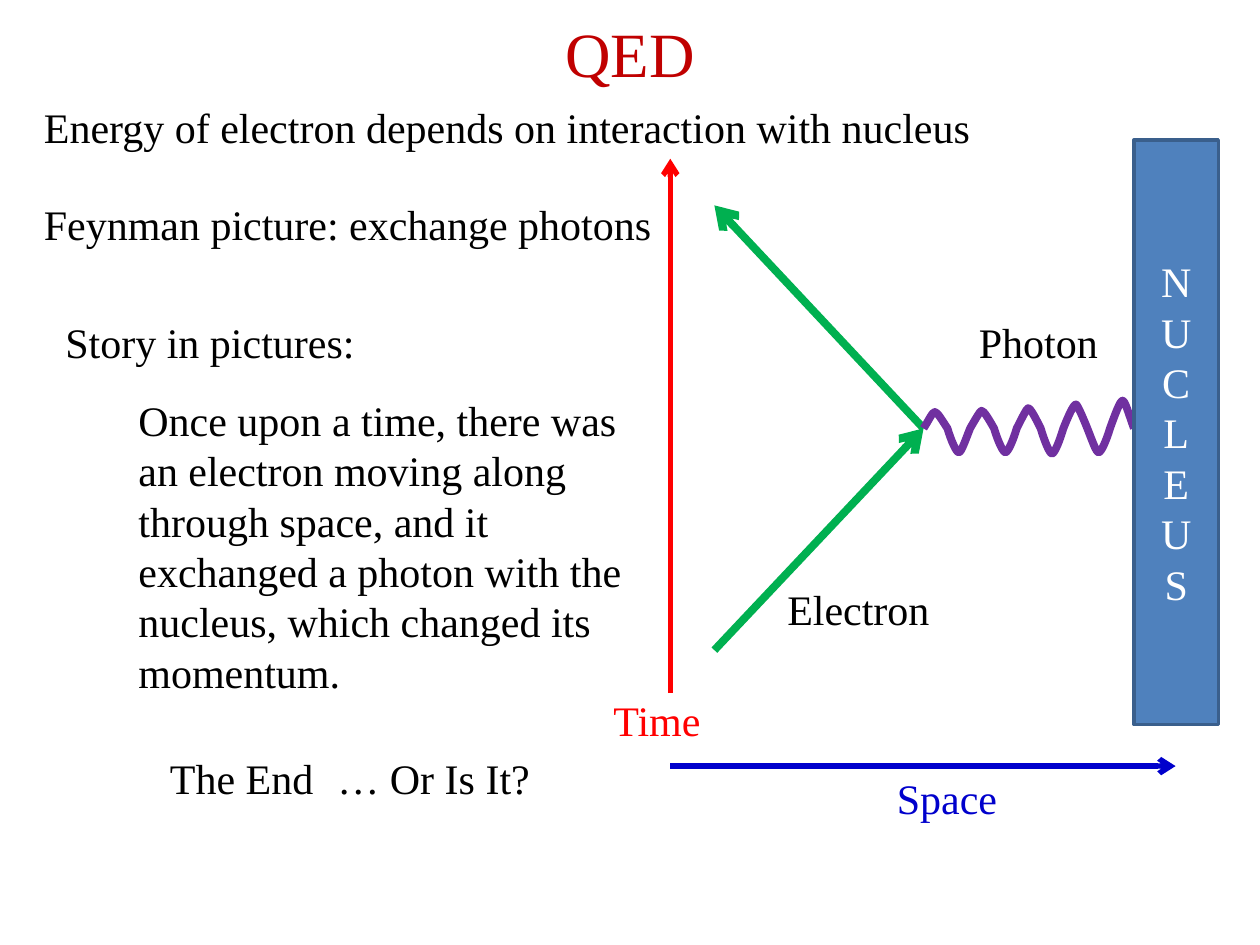
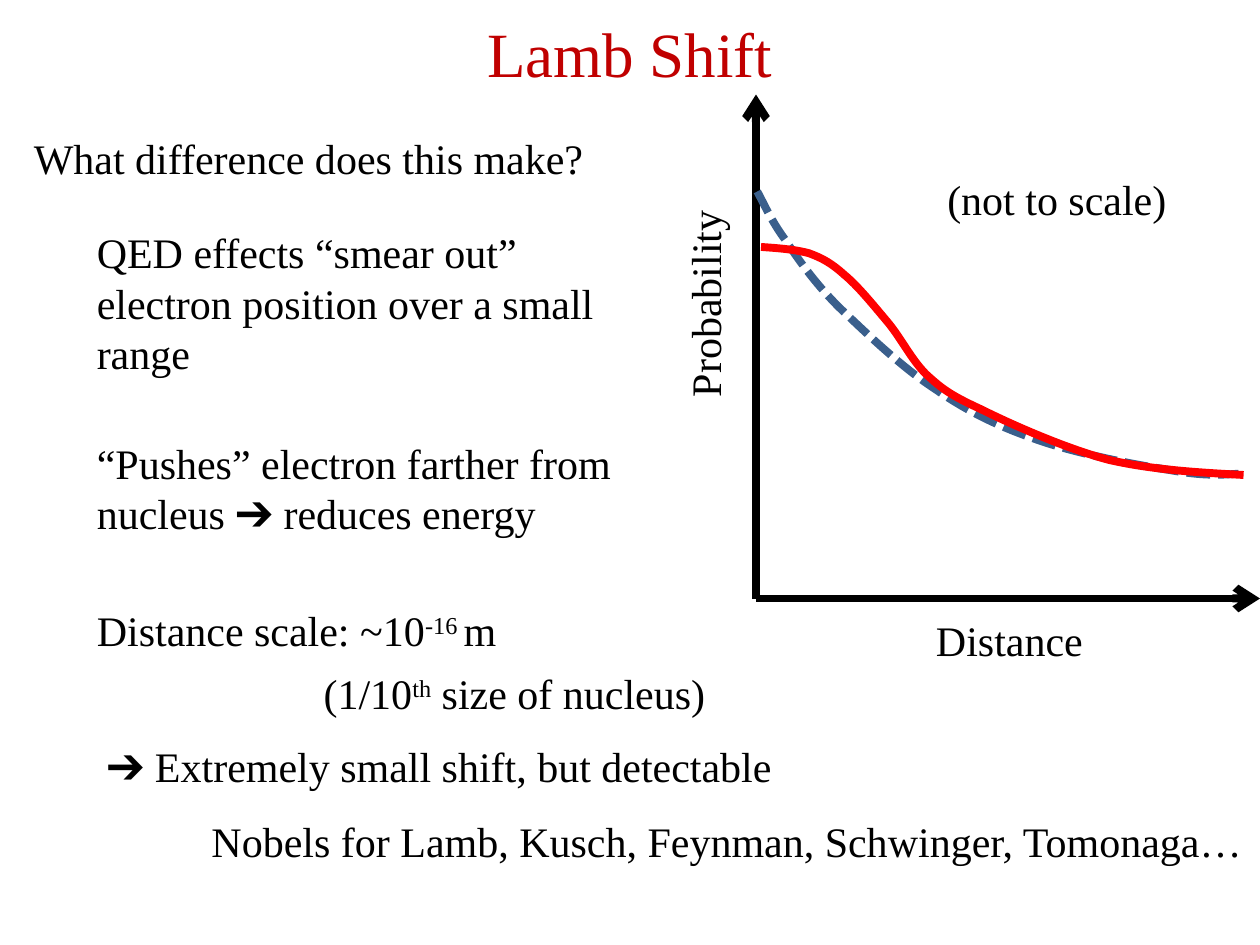
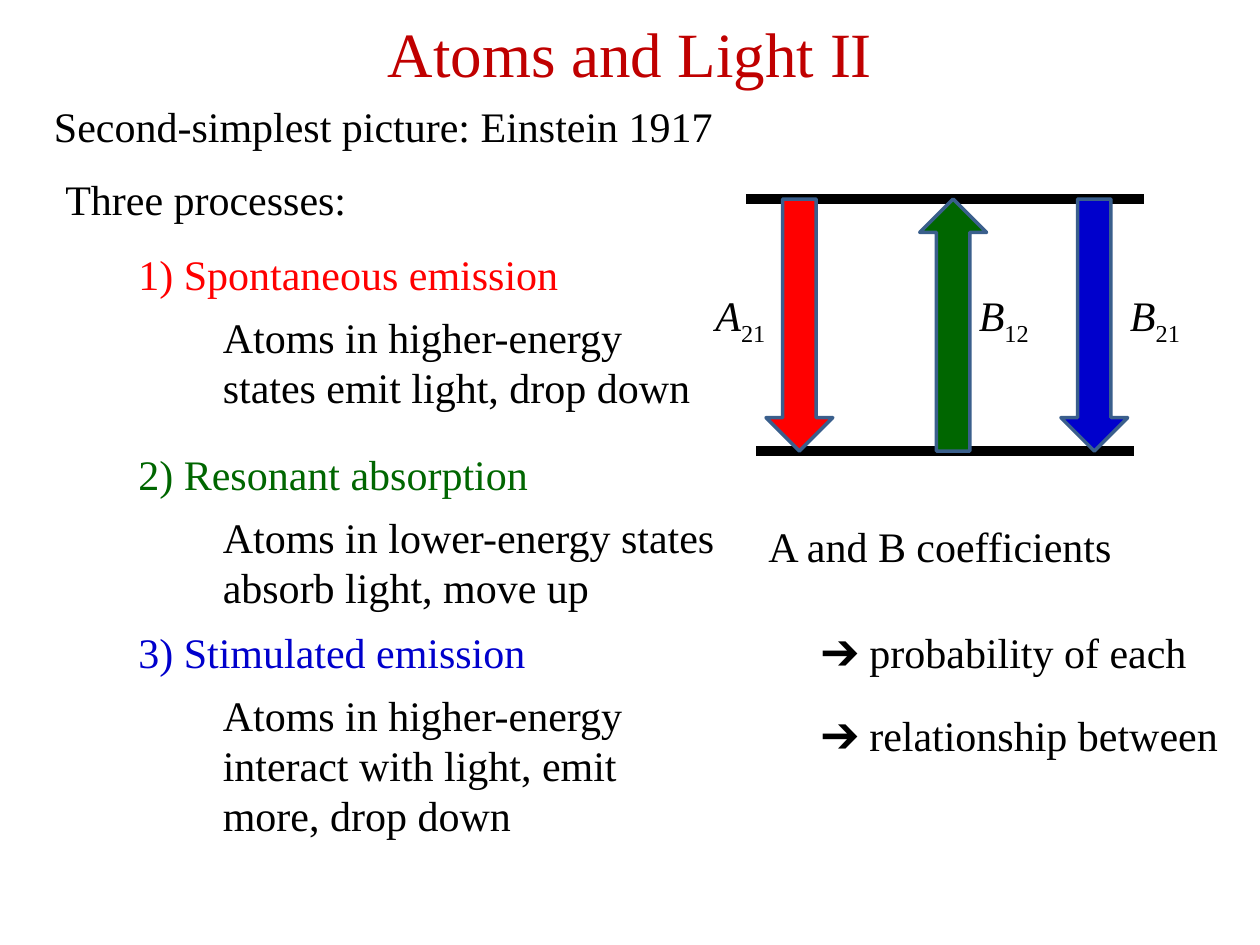
from dataclasses import dataclass

from lxml.etree import SubElement
from pptx import Presentation
from pptx.dml.color import RGBColor
from pptx.enum.dml import MSO_LINE
from pptx.enum.shapes import MSO_CONNECTOR, MSO_SHAPE
from pptx.enum.text import MSO_ANCHOR, MSO_AUTO_SIZE, PP_ALIGN
from pptx.oxml.ns import qn
from pptx.util import Pt

EMU_PER_PX = 9144  # 100 px to the inch
FONT = "Times New Roman"
COLORS = {
    "black": "000000",
    "white": "FFFFFF",
    "title": "C00000",
    "red": "FF0000",
    "green": "006600",
    "blue": "0000CC",
    "electron": "00B050",
    "photon": "7030A0",
    "nucleus": "4F81BD",
    "outline": "3A5F8C",
}


@dataclass(frozen=True)
class Run:
    text: str
    baseline: int = 0  # percent above (+) or below (-) the line
    italic: bool = False


@dataclass(frozen=True)
class Label:
    left: int
    top: int
    width: int
    text: str | list[Run]
    color: str = "black"
    lines: int = 1
    rotation: int = 0


@dataclass(frozen=True)
class Line:
    start: tuple[int, int]
    end: tuple[int, int]
    color: str = "black"
    weight: float = 4.5
    arrow: bool = True


@dataclass(frozen=True)
class Block:
    kind: MSO_SHAPE
    left: int
    top: int
    width: int
    height: int
    fill: str
    text: str = ""


def px(*values: int) -> list[int]:
    return [value * EMU_PER_PX for value in values]


def rgb(name: str) -> RGBColor:
    return RGBColor.from_string(COLORS[name])


def set_line(line, color: str, weight: float) -> None:
    line.color.rgb = rgb(color)
    line.width = Pt(weight)


def write_text(text_frame, text, *, color="black", size=24, align=PP_ALIGN.LEFT,
               anchor=MSO_ANCHOR.TOP, wrap=True) -> None:
    """Write a string, one paragraph a line, or one paragraph of runs."""
    text_frame.word_wrap = wrap
    text_frame.vertical_anchor = anchor
    paragraphs = [[Run(line)] for line in text.split("\n")] if isinstance(text, str) else [text]
    for index, runs in enumerate(paragraphs):
        paragraph = text_frame.add_paragraph() if index else text_frame.paragraphs[0]
        paragraph.alignment = align
        for part in runs:
            run = paragraph.add_run()
            run.text = part.text
            run.font.name, run.font.size = FONT, Pt(size)
            run.font.color.rgb = rgb(color)
            if part.italic:
                run.font.italic = True
            if part.baseline:
                run.font._element.set("baseline", str(part.baseline * 1000))


def add_label(slide, label: Label) -> None:
    height = round(10 + 40.33 * label.lines)
    shape = slide.shapes.add_textbox(*px(label.left, label.top, label.width, height))
    shape.rotation = label.rotation
    write_text(shape.text_frame, label.text, color=label.color, wrap=label.lines > 1)
    shape.text_frame.auto_size = MSO_AUTO_SIZE.SHAPE_TO_FIT_TEXT


def add_line(slide, line: Line) -> None:
    connector = slide.shapes.add_connector(MSO_CONNECTOR.STRAIGHT, *px(*line.start, *line.end))
    set_line(connector.line, line.color, line.weight)
    if line.arrow:
        SubElement(connector.line._get_or_add_ln(), qn("a:tailEnd"), type="arrow")
    SubElement(connector._element.spPr, qn("a:effectLst"))


def add_block(slide, block: Block) -> None:
    shape = slide.shapes.add_shape(
        block.kind, *px(block.left, block.top, block.width, block.height))
    shape.shadow.inherit = False
    shape.fill.solid()
    shape.fill.fore_color.rgb = rgb(block.fill)
    set_line(shape.line, "outline", 2)
    if block.text:
        write_text(shape.text_frame, block.text, color="white",
                   align=PP_ALIGN.CENTER, anchor=MSO_ANCHOR.MIDDLE)


def add_curve(slide, points: list[tuple[int, int]], color: str, dashed: bool = False) -> None:
    """Draw cubic curves: a start, then two controls and an end for each."""
    builder = slide.shapes.build_freeform(*points[0], scale=EMU_PER_PX)
    builder.add_line_segments(points[1:], close=False)
    shape = builder.convert_to_shape()
    # Join every three straight segments into one cubic segment
    segments = list(shape._element.iter(qn("a:lnTo")))
    outline = segments[0].getparent()
    for first in range(0, len(segments), 3):
        cubic = SubElement(outline, qn("a:cubicBezTo"))
        for segment in segments[first:first + 3]:
            cubic.append(segment[0])
            outline.remove(segment)
    shape.shadow.inherit = False
    shape.fill.background()
    set_line(shape.line, color, 4.5)
    if dashed:
        shape.line.dash_style = MSO_LINE.SQUARE_DOT


def photon_wave() -> list[tuple[int, int]]:
    left, right, middle = 733, 900, 340
    peaks = [327, 359, 326, 359, 324, 360, 321, 359, 318]
    step = (right - left) / len(peaks)
    points = [(left, middle)]
    for index, peak in enumerate(peaks):
        slope = (middle + peak) / 2
        for part, y in ((0.2, slope), (0.4, peak), (0.5, peak),
                        (0.6, peak), (0.8, slope), (1, middle)):
            points.append((round(left + (index + part) * step), round(y)))
    return points


def add_slide(presentation, title: str, labels: list[Label], lines: list[Line]):
    slide = presentation.slides.add_slide(presentation.slide_layouts[6])
    heading = slide.shapes.add_textbox(*px(50, 0, 900, 83))
    write_text(heading.text_frame, title, color="title", size=36,
               align=PP_ALIGN.CENTER, anchor=MSO_ANCHOR.MIDDLE)
    for line in lines:
        add_line(slide, line)
    for label in labels:
        add_label(slide, label)
    return slide


def add_qed(presentation) -> None:
    vertex = (733, 340)
    labels = [
        Label(25, 76, 762, "Energy of electron depends on interaction with nucleus"),
        Label(25, 153, 507, "Feynman picture: exchange photons"),
        Label(615, 458, 135, "Electron"),
        Label(767, 246, 118, "Photon"),
        Label(477, 546, 90, "Time", "red"),
        Label(702, 608, 100, "Space", "blue"),
        Label(42, 246, 252, "Story in pictures:"),
        Label(100, 308, 422, "Once upon a time, there was an electron moving along through "
              "space, and it exchanged a photon with the nucleus, which changed its momentum.",
              lines=6),
        Label(125, 592, 135, "The End"),
        Label(258, 592, 174, "… Or Is It?"),
    ]
    lines = [
        Line((567, 516), vertex, "electron"),
        Line(vertex, (567, 163), "electron"),
        Line((532, 550), (532, 126), "red", 3),
        Line((532, 608), (933, 608), "blue", 3),
    ]
    slide = add_slide(presentation, "QED", labels, lines)
    add_curve(slide, photon_wave(), "photon")
    add_block(slide, Block(MSO_SHAPE.RECTANGLE, 900, 111, 67, 464, "nucleus",
                           "\n".join("NUCLEUS")))


def add_lamb_shift(presentation) -> None:
    origin = (600, 475)
    labels = [
        Label(17, 100, 460, "What difference does this make?"),
        Label(67, 175, 450, "QED effects “smear out” electron position over a small range",
              lines=3),
        Label(67, 342, 433, "“Pushes” electron farther from nucleus ➔ reduces energy", lines=2),
        Label(474, 215, 170, "Probability", rotation=270),
        Label(733, 483, 138, "Distance"),
        Label(742, 133, 196, "(not to scale)"),
        Label(67, 475, 345, [Run("Distance scale: ~10"), Run("-16 ", 30), Run("m")]),
        Label(247, 525, 328, [Run("(1/10"), Run("th", 30), Run(" size of nucleus)")]),
        Label(75, 583, 558, "➔ Extremely small shift, but detectable"),
        Label(158, 642, 846, "Nobels for Lamb, Kusch, Feynman, Schwinger, Tomonaga…"),
    ]
    axes = [Line(origin, (600, 75)), Line(origin, (1000, 475))]
    slide = add_slide(presentation, "Lamb Shift", labels, axes)
    # Point-like electron, then the smeared one
    add_curve(slide, [
        (601, 152), (607, 163), (612, 175), (623, 190), (633, 205), (646, 224), (666, 244),
        (686, 263), (715, 291), (741, 308), (767, 326), (791, 338), (823, 349),
        (854, 360), (901, 369), (928, 373), (955, 378), (969, 377), (983, 376),
    ], "outline", dashed=True)
    add_curve(slide, [
        (604, 196), (618, 197), (631, 198), (642, 201), (653, 205), (660, 209), (670, 218),
        (681, 227), (693, 242), (704, 255), (715, 268), (723, 285), (735, 297),
        (748, 309), (755, 314), (779, 325), (803, 337), (846, 356), (880, 365),
        (915, 373), (951, 375), (987, 377),
    ], "red")


def add_atoms_and_light(presentation) -> None:
    upper, lower = 158, 358
    processes = [
        (192, 357, "1) Spontaneous emission", "red",
         "Atoms in higher-energy states emit light, drop down", 2),
        (351, 332, "2) Resonant absorption", "green",
         "Atoms in lower-energy states absorb light, move up", 2),
        (492, 330, "3) Stimulated emission", "blue",
         "Atoms in higher-energy interact with light, emit more, drop down", 3),
    ]
    labels = [
        Label(33, 75, 548, "Second-simplest picture: Einstein 1917"),
        Label(42, 133, 245, "Three processes:"),
        Label(600, 408, 295, "A and B coefficients"),
        Label(642, 492, 318, "➔ probability of each"),
        Label(642, 558, 344, "➔ relationship between"),
    ]
    for top, width, name, color, detail, count in processes:
        labels.append(Label(100, top, width, name, color))
        labels.append(Label(167, top + 50, 417, detail, lines=count))
    for left, letter, index in ((558, "A", "21"), (767, "B", "12"), (887, "B", "21")):
        labels.append(Label(left, 225, 63, [Run(letter, italic=True), Run(index, -25)]))
    levels = [
        Line((592, upper), (908, upper), weight=6, arrow=False),
        Line((600, lower), (900, lower), weight=6, arrow=False),
    ]
    slide = add_slide(presentation, "Atoms and Light II", labels, levels)
    for kind, left, color in ((MSO_SHAPE.DOWN_ARROW, 608, "red"),
                              (MSO_SHAPE.UP_ARROW, 730, "green"),
                              (MSO_SHAPE.DOWN_ARROW, 842, "blue")):
        add_block(slide, Block(kind, left, upper, 53, lower - upper, color))


def main() -> None:
    presentation = Presentation()
    presentation.slide_width, presentation.slide_height = px(1000, 750)
    add_qed(presentation)
    add_lamb_shift(presentation)
    add_atoms_and_light(presentation)
    presentation.save("out.pptx")


if __name__ == "__main__":
    main()
